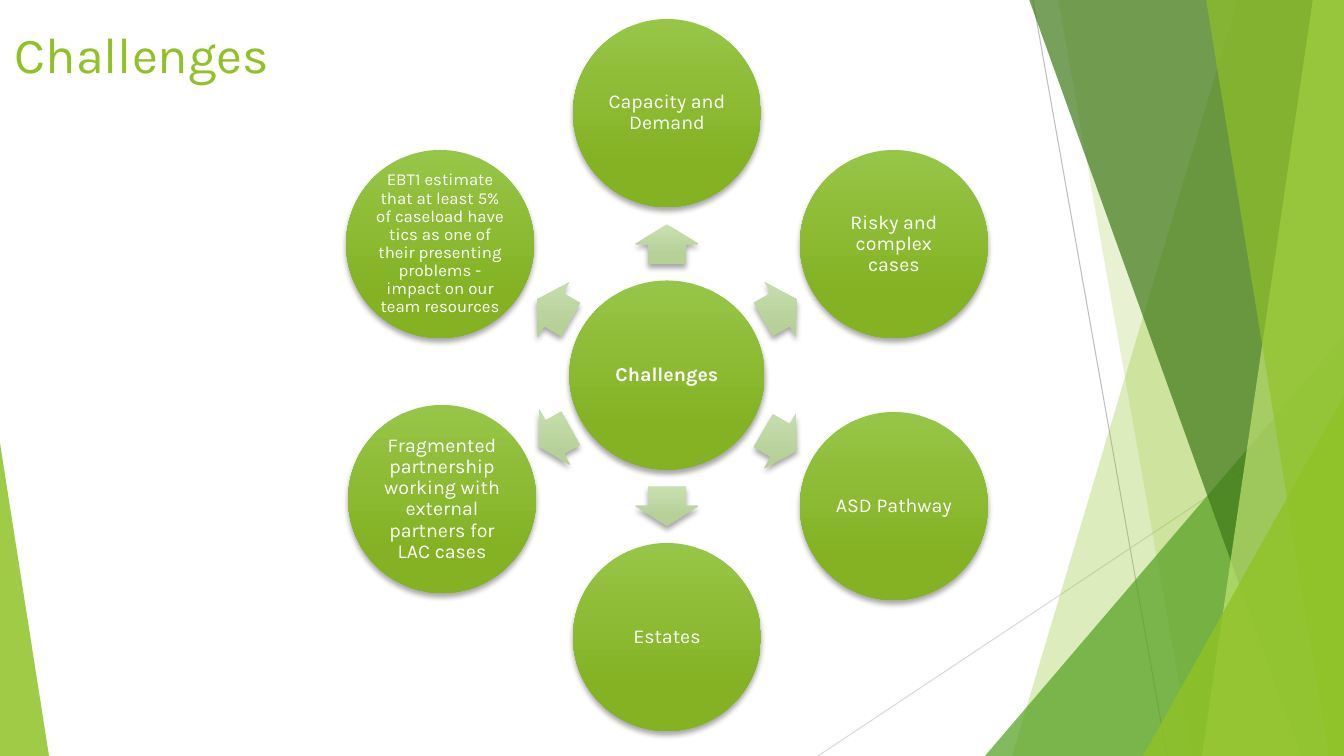
from dataclasses import dataclass
from math import atan2, cos, degrees, hypot, radians, sin

from lxml import etree
from pptx import Presentation
from pptx.dml.color import RGBColor
from pptx.enum.shapes import MSO_CONNECTOR, MSO_SHAPE
from pptx.enum.text import MSO_ANCHOR, PP_ALIGN
from pptx.oxml.ns import qn
from pptx.util import Pt

PX = 914400 / 100.8
WIDTH, HEIGHT = 1344, 756
OVAL, ARROW, TRIANGLE = MSO_SHAPE.OVAL, MSO_SHAPE.RIGHT_ARROW, MSO_SHAPE.ISOSCELES_TRIANGLE
STRAIGHT = MSO_CONNECTOR.STRAIGHT
CENTER, MIDDLE = PP_ALIGN.CENTER, MSO_ANCHOR.MIDDLE


@dataclass(frozen=True)
class Theme:
    """Colours, font and type sizes."""
    font: str = "Karla"
    green: str = "90C226"
    leaf: str = "54A021"
    forest: str = "3F7819"
    lime: str = "C0E474"
    white: str = "FFFFFF"
    line: str = "BFBFBF"
    faint_line: str = "D9D9D9"
    circle: tuple = ("97C547", "84B223")
    arrow: tuple = ("C9DFB1", "B6D098")
    title: int = 36
    label: int = 14
    small: int = 12


class SlideBuilder:
    """Draws themed elements on the current slide, in px."""

    def __init__(self, prs, theme):
        self.theme = theme
        self.s = prs.slides.add_slide(prs.slide_layouts[6])

    def line(self, x1, y1, x2, y2, color):
        c = self.s.shapes.add_connector(STRAIGHT, *(round(v * PX) for v in (x1, y1, x2, y2)))
        c.line.color.rgb = RGBColor.from_string(color)
        c.line.width = Pt(0.75)
        etree.SubElement(c._element.spPr, qn("a:effectLst"))

    def shape(self, kind, x, y, w, h):
        sp = self.s.shapes.add_shape(kind, *(round(v * PX) for v in (x, y, w, h)))
        return self.plain(sp)

    def plain(self, sp):
        sp.line.fill.background()
        sp.shadow.inherit = False
        return sp

    def tint(self, sp, color, opacity):
        sp.fill.solid()
        sp.fill.fore_color.rgb = RGBColor.from_string(color)
        clr = sp._element.spPr.find(qn("a:solidFill"))[0]
        etree.SubElement(clr, qn("a:alpha"), val=str(opacity * 1000))

    def facet(self, top, bottom, color, opacity):
        fb = self.s.shapes.build_freeform(top, -1, PX)
        fb.add_line_segments([(WIDTH, -1), (WIDTH, HEIGHT), (bottom, HEIGHT)])
        self.tint(self.plain(fb.convert_to_shape()), color, opacity)

    def triangle(self, x, y, w, apex, color, opacity):
        sp = self.shape(TRIANGLE, x, y, w, HEIGHT - y)
        sp.adjustments[0] = apex
        self.tint(sp, color, opacity)

    def glossy(self, sp, colors):
        sp.fill.gradient()
        sp.fill.gradient_angle = 270
        for stop, color, position in zip(sp.fill.gradient_stops, colors, (0, 0.78)):
            stop.color.rgb = RGBColor.from_string(color)
            stop.position = position
        spPr = sp._element.spPr
        spPr.find(qn("a:gradFill")).set("rotWithShape", "0")
        shadow = etree.SubElement(spPr.find(qn("a:effectLst")), qn("a:outerShdw"),
                                  blurRad=str(Pt(4)), dist=str(Pt(3)), dir="5400000",
                                  rotWithShape="0")
        black = etree.SubElement(shadow, qn("a:srgbClr"), val="000000")
        etree.SubElement(black, qn("a:alpha"), val="35000")

    def text(self, tf, text, size, color, bold=False):
        tf.word_wrap = True
        p = tf.paragraphs[0]
        p.text = text
        p.font.name, p.font.size, p.font.bold = self.theme.font, Pt(size), bold
        p.font.color.rgb = RGBColor.from_string(color)
        return p

    def title(self, text, x, y, w, h):
        tb = self.s.shapes.add_textbox(*(round(v * PX) for v in (x, y, w, h)))
        self.text(tb.text_frame, text, self.theme.title, self.theme.green)

    def circle(self, cx, cy, w, h, text, size, bold=False):
        sp = self.shape(OVAL, cx - w / 2, cy - h / 2, w, h)
        self.glossy(sp, self.theme.circle)
        tf = sp.text_frame
        tf.margin_left = tf.margin_right = tf.margin_top = tf.margin_bottom = round(2 * PX)
        tf.vertical_anchor = MIDDLE
        p = self.text(tf, text, size, self.theme.white, bold)
        p.alignment, p.line_spacing = CENTER, 0.9

    def arrow(self, cx, cy, length, width, angle):
        sp = self.shape(ARROW, cx - length / 2, cy - width / 2, length, width)
        sp.adjustments[0], sp.adjustments[1] = 0.6, 0.5
        sp.rotation = angle % 360
        self.glossy(sp, self.theme.arrow)


def draw_background(b, t):
    """Draws the thin lines and the translucent facets."""
    b.line(1033, 0, 1167, HEIGHT, t.line)
    b.line(WIDTH, 406, 818, HEIGHT, t.faint_line)
    b.facet(1238, 1012, t.green, 30)
    b.facet(1058, 1192, t.green, 20)
    b.triangle(985, 336, 359, 1, t.leaf, 72)
    b.facet(1029, 1301, t.forest, 70)
    b.facet(1313, 1202, t.lime, 70)
    b.facet(1206, 1329, t.green, 65)
    b.triangle(1143, 396, 201, 1, t.green, 80)
    b.triangle(0, 443, 49, 0, t.green, 85)


def draw_wheel(b, t):
    """Draws the hub with its ring of challenges."""
    hub_x, hub_y, radius, diameter = 667, 375, 262, 188
    challenges = [
        ("Capacity and Demand", t.label, 0, 0),
        ("Risky and complex cases", t.label, 0, 0),
        ("ASD Pathway", t.label, 0, 0),
        ("Estates", t.label, 0, 0),
        ("Fragmented partnership working with external partners for LAC cases", t.label, 2, -7),
        ("EBT1 estimate that at least 5% of caseload have tics as one of their "
         "presenting problems - impact on our team resources", t.small, 0, 0),
    ]
    b.circle(hub_x, hub_y, 195, 189, "Challenges", t.label, bold=True)
    for i, (text, size, shift_x, shift_y) in enumerate(challenges):
        turn = radians(360 / len(challenges) * i - 90)
        dx = radius * cos(turn) + shift_x
        dy = radius * sin(turn) + shift_y
        length = (hypot(dx, dy) - diameter) * 0.53
        b.arrow(hub_x + dx / 2, hub_y + dy / 2, length, 63, degrees(atan2(dy, dx)))
        b.circle(hub_x + dx, hub_y + dy, diameter, diameter, text, size)


def main():
    """Builds the slide and saves it."""
    prs = Presentation()
    prs.slide_width, prs.slide_height = round(WIDTH * PX), round(HEIGHT * PX)
    theme = Theme()
    b = SlideBuilder(prs, theme)
    draw_background(b, theme)
    b.title("Challenges", 5, 18, 948, 145)
    draw_wheel(b, theme)
    prs.save("out.pptx")


if __name__ == "__main__":
    main()
